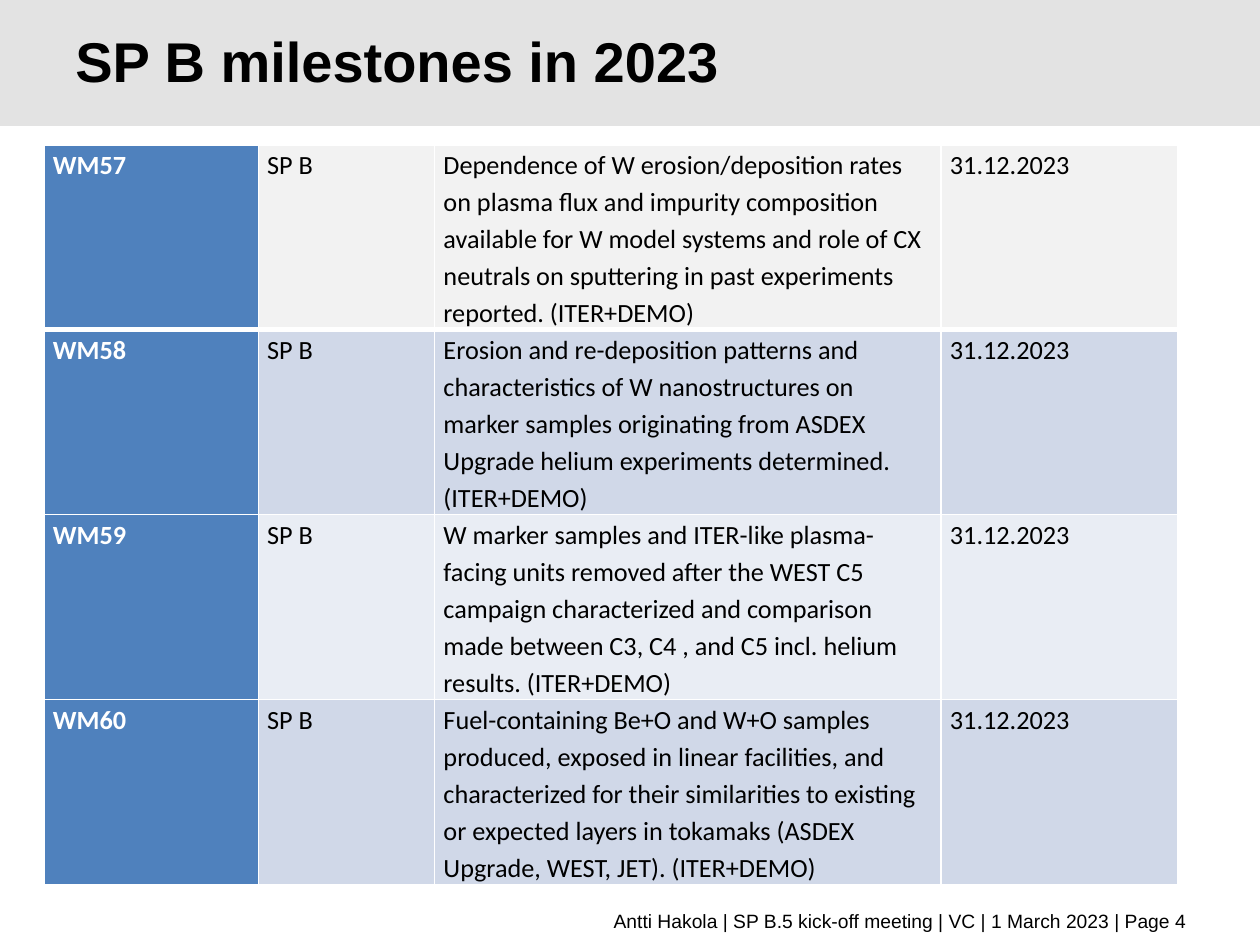
from dataclasses import dataclass

from lxml import etree
from pptx import Presentation
from pptx import util as u
from pptx.dml.color import RGBColor
from pptx.enum import shapes, text
from pptx.oxml.ns import qn


@dataclass(frozen=True)
class Theme:
    band: str = "E3E3E3"
    ink: str = "000000"
    paper: str = "FFFFFF"
    key_column: str = "4F81BD"
    row_fills: tuple = ("F2F2F2", "D0D8E8", "E9EDF4", "D0D8E8")
    heading_font: str = "Arial"
    table_font: str = "Calibri"
    title_size: int = 32
    table_size: int = 15
    footer_size: int = 11
    thin_rule: int = 1
    thick_rule: int = 3


MILESTONES = (
    ("WM57", "Dependence of W erosion/deposition rates on plasma flux and impurity "
             "composition available for W model systems and role of CX neutrals on "
             "sputtering in past experiments reported. (ITER+DEMO)"),
    ("WM58", "Erosion and re-deposition patterns and characteristics of W nanostructures "
             "on marker samples originating from ASDEX Upgrade helium experiments "
             "determined. (ITER+DEMO)"),
    ("WM59", "W marker samples and ITER-like plasma-facing units removed after the WEST C5 "
             "campaign characterized and comparison made between C3, C4 , and C5 incl. "
             "helium results. (ITER+DEMO)"),
    ("WM60", "Fuel-containing Be+O and W+O samples produced, exposed in linear facilities, "
             "and characterized for their similarities to existing or expected layers in "
             "tokamaks (ASDEX Upgrade, WEST, JET). (ITER+DEMO)"),
)
PROJECT, DEADLINE = "SP B", "31.12.2023"


class SlideBuilder:
    """Places elements on a grid of 10 columns by 7.5 rows, one inch each."""

    COLUMNS, ROWS = 10, 7.5

    def __init__(self, deck, theme):
        self.theme = theme
        deck.slide_width = u.Inches(self.COLUMNS)
        deck.slide_height = u.Inches(self.ROWS)
        self.slide = deck.slides.add_slide(deck.slide_layouts[6])

    @staticmethod
    def area(*grid_units):
        return [u.Inches(value) for value in grid_units]

    @staticmethod
    def style(paragraph, font, size, color, bold=False):
        for run in paragraph.runs:
            run.font.name = font
            run.font.size = u.Pt(size)
            run.font.bold = bold
            run.font.color.rgb = RGBColor.from_string(color)

    def band(self, *place):
        band = self.slide.shapes.add_shape(
            shapes.MSO_SHAPE.RECTANGLE, *self.area(*place))
        band.shadow.inherit = False
        band.fill.solid()
        band.fill.fore_color.rgb = RGBColor.from_string(self.theme.band)
        band.line.fill.background()

    def label(self, wording, place, size, bold=False, align=text.PP_ALIGN.LEFT):
        frame = self.slide.shapes.add_textbox(*self.area(*place)).text_frame
        frame.word_wrap = True
        frame.vertical_anchor = text.MSO_ANCHOR.MIDDLE
        frame.text = wording
        paragraph = frame.paragraphs[0]
        paragraph.alignment = align
        self.style(paragraph, self.theme.heading_font, size, self.theme.ink, bold)
        return paragraph

    def rule_cell(self, cell, top, bottom):
        """Draw the four borders; they must precede the fill in the cell's XML."""
        thin = self.theme.thin_rule
        sides = (("a:lnL", thin), ("a:lnR", thin), ("a:lnT", top), ("a:lnB", bottom))
        properties = cell._tc.get_or_add_tcPr()
        for position, (side, width) in enumerate(sides):
            border = etree.Element(qn(side), w=str(u.Pt(width)))
            fill = etree.SubElement(border, qn("a:solidFill"))
            etree.SubElement(fill, qn("a:srgbClr"), val=self.theme.paper)
            properties.insert(position, border)

    def cell(self, cell, wording, fill, is_key):
        cell.fill.solid()
        cell.fill.fore_color.rgb = RGBColor.from_string(fill)
        cell.margin_left = cell.margin_right = u.Inches(0.07)
        cell.margin_top = cell.margin_bottom = 0
        cell.text = wording
        paragraph = cell.text_frame.paragraphs[0]
        paragraph.line_spacing = 1.15
        paragraph.space_after = u.Pt(3)
        color = self.theme.paper if is_key else self.theme.ink
        self.style(paragraph, self.theme.table_font, self.theme.table_size, color, is_key)

    def table(self, rows, place, column_widths):
        theme = self.theme
        table = self.slide.shapes.add_table(
            len(rows), len(column_widths), *self.area(*place)).table
        for column, width in zip(table.columns, column_widths):
            column.width = u.Inches(width)
        for r, row in enumerate(rows):
            top = theme.thick_rule if r == 1 else theme.thin_rule
            bottom = theme.thick_rule if r == 0 else theme.thin_rule
            for c, wording in enumerate(row):
                is_key = c == 0
                fill = theme.key_column if is_key else theme.row_fills[r]
                self.cell(table.cell(r, c), wording, fill, is_key)
                self.rule_cell(table.cell(r, c), top, bottom)


def main():
    deck = Presentation()
    theme = Theme()
    builder = SlideBuilder(deck, theme)
    builder.band(0, 0, builder.COLUMNS, 1)
    builder.label("Antti Hakola | SP B.5 kick-off meeting | VC | 1 March 2023 | Page 4",
                  (0.51, 7.16, 9.01, 0.29), theme.footer_size,
                  align=text.PP_ALIGN.RIGHT)
    rows = [(code, PROJECT, goal, DEADLINE) for code, goal in MILESTONES]
    builder.table(rows, (0.35, 1.15, 9, 5.87), (1.7, 1.4, 4.02, 1.88))
    title = builder.label("SP B milestones in 2023", (0.5, 0.05, 8.25, 0.95),
                          theme.title_size, bold=True)
    title.line_spacing = u.Pt(theme.title_size)
    deck.save("out.pptx")


if __name__ == "__main__":
    main()
